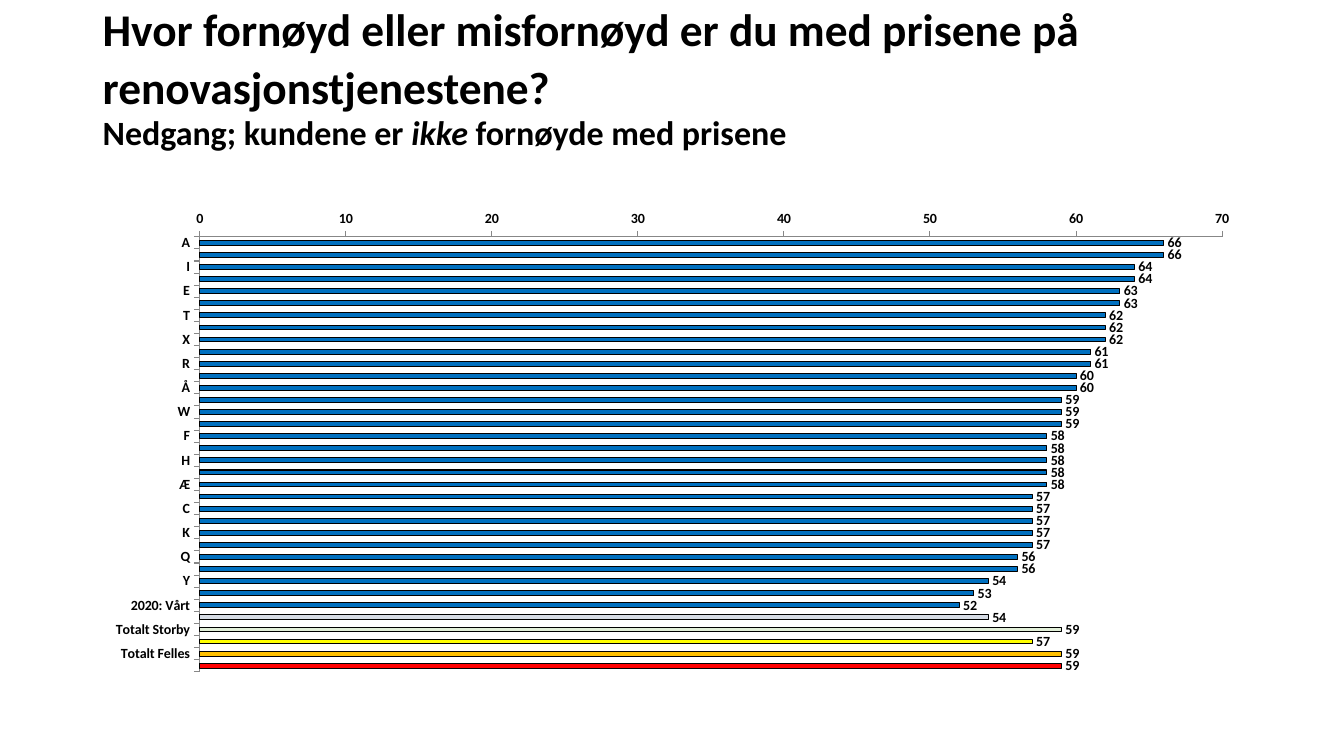
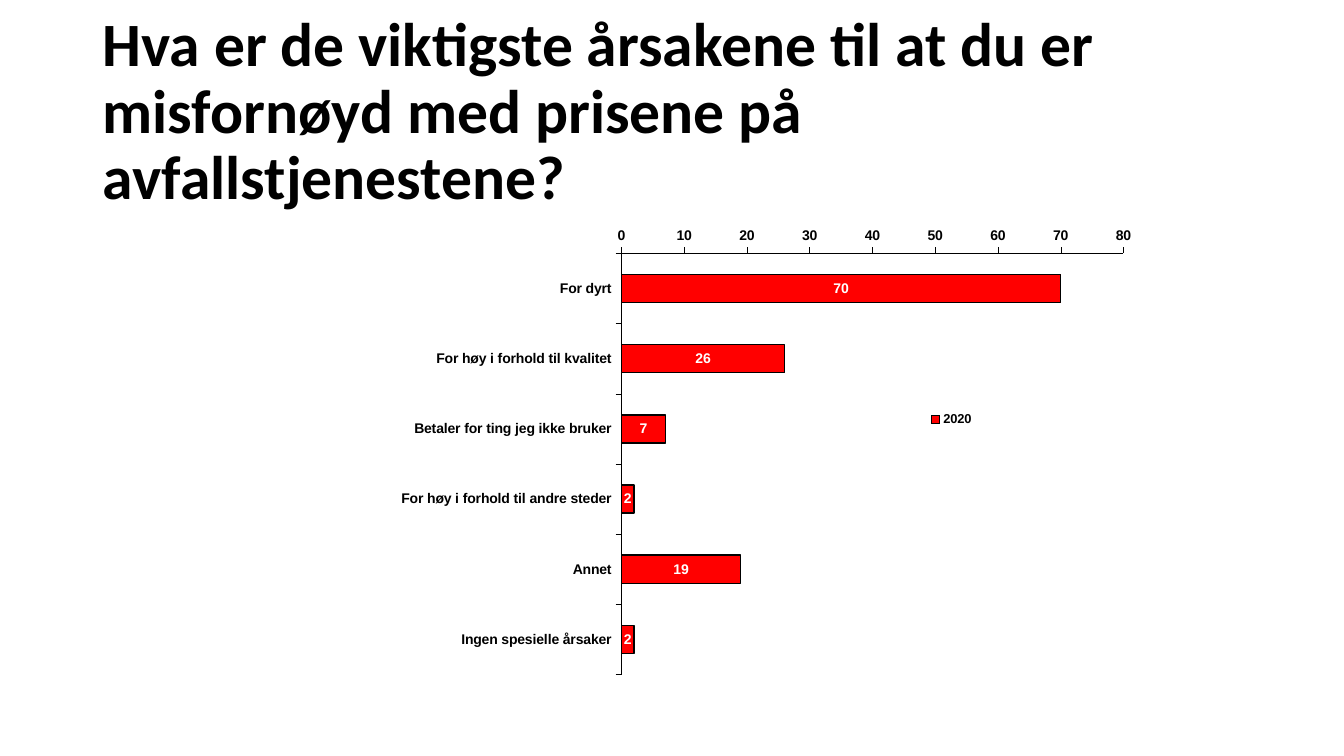
from lxml import etree
from pptx import Presentation
from pptx import util as u
from pptx.chart.data import CategoryChartData
from pptx.dml.color import RGBColor
from pptx.enum import chart as ch, text
from pptx.oxml.ns import qn

# Shared looks
HUE = {"ink": "000000", "paper": "FFFFFF", "blue": "0070C0", "grey": "D6DCE5",
       "green": "E2F0D9", "yellow": "FFFF00", "gold": "FFC000", "red": "FF0000"}
TITLE = [u.Inches(n) for n in (0.92, 0.4, 11.5, 1.45)]
CHART = [u.Inches(n) for n in (0.92, 2, 11.5, 4.76)]


def style(font, hue="ink", **form):
    for key, val in form.items():
        setattr(font, key, val)
    font.color.rgb = RGBColor.from_string(HUE[hue])


def place(part, spot, **frame):
    """Give a plot area or legend a manual layout."""
    for old in part.findall(qn("c:layout")):
        part.remove(old)
    lay = etree.Element(qn("c:layout"))
    man = etree.SubElement(lay, qn("c:manualLayout"))
    for tag, val in frame.items():
        etree.SubElement(man, qn("c:" + tag), val=str(val))
    part.insert(spot, lay)


# Titles: lines of (text, size, bold, italic) runs
HEADS = [
    [[("Hvor fornøyd eller misfornøyd er du med prisene på renovasjonstjenestene?",
       32.4, True, False), (" ", 39.6, False, False)],
     [("Nedgang; kundene er ", 24.3, True, False), ("ikke", 24.3, True, True),
      (" fornøyde med prisene", 24.3, True, False)],
     []],
    [[("Hva er de viktigste årsakene til at du er misfornøyd med prisene "
       "på avfallstjenestene?", 44, True, False)]],
]

# Chart data
PRICE = {
    "A": 66, "AA": 66, "I": 64, "M": 64, "E": 63, "L": 63, "T": 62, "U": 62,
    "X": 62, "P": 61, "R": 61, "Z": 60, "Å": 60, "D": 59, "W": 59, "Ø": 59,
    "F": 58, "G": 58, "H": 58, "V": 58, "Æ": 58, "B": 57, "C": 57, "J": 57,
    "K": 57, "S": 57, "Q": 56, "AB": 56, "Y": 54, "N": 53, "2020: Vårt": 52,
    "2018: Vårt": 54, "Totalt Storby": 59, "Totalt Innsikt": 57,
    "Totalt Felles": 59, "Totalt Alle20": 59}
CAUSE = {
    "For dyrt": 70, "For høy i forhold til kvalitet": 26,
    "Betaler for ting jeg ikke bruker": 7,
    "For høy i forhold til andre steder": 2, "Annet": 19,
    "Ingen spesielle årsaker": 2}
KIND, SPOT = ch.XL_CHART_TYPE, ch.XL_LABEL_POSITION
PLANS = [
    dict(name="Series 1", data=PRICE, kind=KIND.BAR_CLUSTERED, face="Calibri",
         fill="blue", line=0.75, label="ink", spot=SPOT.OUTSIDE_END, top=70),
    dict(name="2020", data=CAUSE, kind=KIND.BAR_STACKED, face="Arial",
         fill="red", line=1, label="paper", spot=SPOT.CENTER, top=80),
]

deck = Presentation()
deck.slide_width, deck.slide_height = u.Inches(13.33), u.Inches(7.5)
charts = []

for head, plan in zip(HEADS, PLANS):
    slide = deck.slides.add_slide(deck.slide_layouts[6])

    # Title
    frame = slide.shapes.add_textbox(*TITLE).text_frame
    frame.word_wrap = True
    frame.vertical_anchor = text.MSO_ANCHOR.MIDDLE
    para = frame.paragraphs[0]
    para.line_spacing = 0.9
    for row, runs in enumerate(head):
        if row:
            para.add_line_break()
        for words, size, bold, slant in runs:
            run = para.add_run()
            run.text = words
            style(run.font, name="Calibri", size=u.Pt(size), bold=bold, italic=slant)
    etree.SubElement(para._p, qn("a:endParaRPr"), sz="3960")

    # Bar chart
    data = CategoryChartData()
    data.categories = list(plan["data"])
    data.add_series(plan["name"], list(plan["data"].values()))
    chart = slide.shapes.add_chart(plan["kind"], *CHART, data).chart
    charts.append(chart)
    chart.has_title = chart.has_legend = False
    form = dict(name=plan["face"], size=u.Pt(10), bold=True)
    style(chart.font, **form)

    # Axes
    cat, val = chart.category_axis, chart.value_axis
    cat.reverse_order = True
    val.minimum_scale, val.maximum_scale, val.major_unit = 0, plan["top"], 10
    for axis in (cat, val):
        axis.has_major_gridlines = False
        axis.major_tick_mark = ch.XL_TICK_MARK.OUTSIDE
        axis.minor_tick_mark = ch.XL_TICK_MARK.NONE
        style(axis.tick_labels.font, **form)

    # Bars and their values
    plot = chart.plots[0]
    plot.gap_width, plot.vary_by_categories = 150, False
    bars = plot.series[0]
    tail = ["grey", "green", "yellow", "gold", "red"] if plan["data"] is PRICE else []
    first = len(plan["data"]) - len(tail)
    marks = [bars.points[first + n] for n in range(len(tail))]
    for item, hue in zip([bars] + marks, [plan["fill"]] + tail):
        item.format.fill.solid()
        item.format.fill.fore_color.rgb = RGBColor.from_string(HUE[hue])
        item.format.line.color.rgb = RGBColor.from_string(HUE["ink"])
        item.format.line.width = u.Pt(plan["line"])
    tags = bars.data_labels
    tags.show_value, tags.position = True, plan["spot"]
    style(tags.font, plan["label"], **form)

# Slide 2: black axes, fixed plot area and legend
chart = charts[1]
chart.plots[0].overlap = 100
for axis in (chart.category_axis, chart.value_axis):
    axis.format.line.color.rgb = RGBColor.from_string(HUE["ink"])
    axis.format.line.width = u.Pt(0.25)
chart.has_legend = True
key = chart.legend
key.position, key.include_in_layout = ch.XL_LEGEND_POSITION.RIGHT, False
style(key.font, name="Arial", size=u.Pt(9.2), bold=True)
place(key._element, 1, xMode="edge", yMode="edge", x=0.72, y=0.43)
place(chart._chartSpace.chart.plotArea, 0, layoutTarget="inner", xMode="edge",
      yMode="edge", x=0.456, y=0.108, w=0.433, h=0.878)

deck.save("out.pptx")
